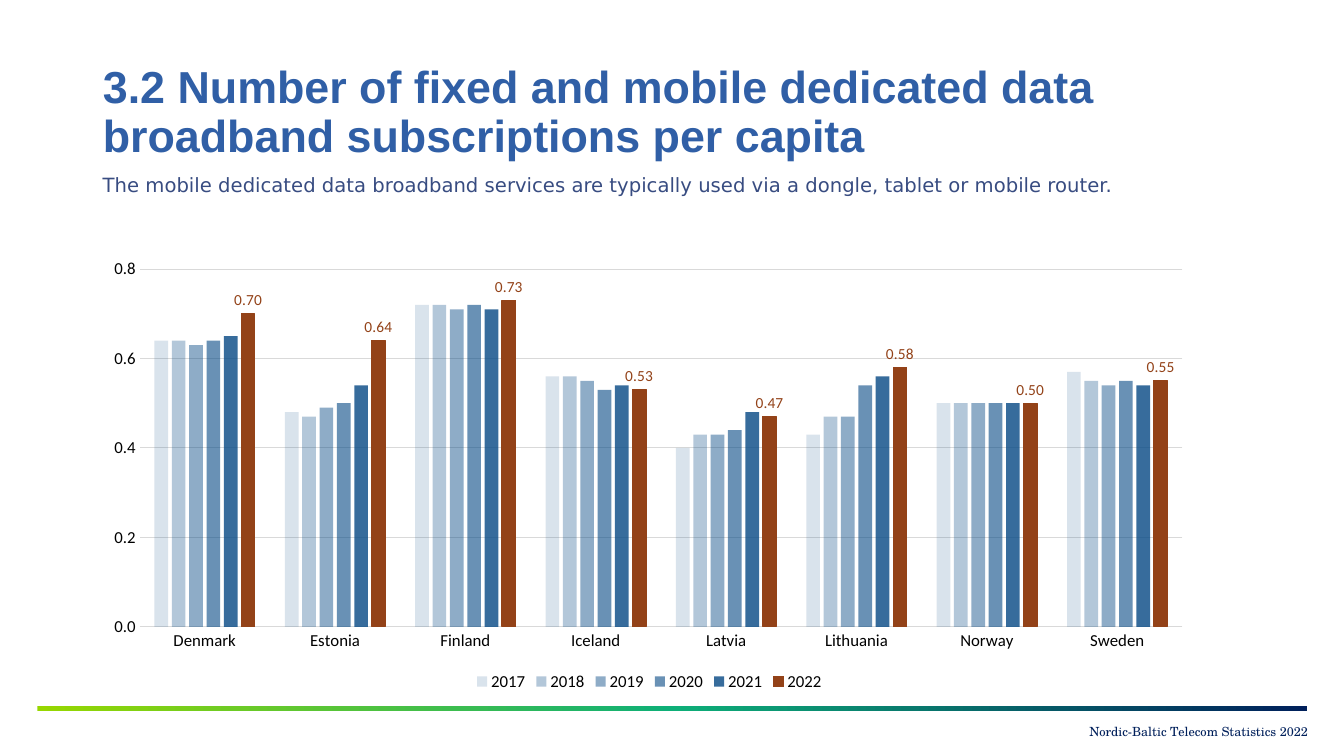
from lxml import etree
from pptx import Presentation
from pptx.chart.data import CategoryChartData
from pptx.dml.color import RGBColor
from pptx.enum.chart import XL_CHART_TYPE as ChartType
from pptx.enum.chart import XL_LABEL_POSITION as LabelPosition
from pptx.enum.chart import XL_LEGEND_POSITION as LegendPosition
from pptx.enum.chart import XL_TICK_MARK as TickMark
from pptx.enum.shapes import MSO_SHAPE as Preset
from pptx.enum.text import MSO_ANCHOR as Anchor
from pptx.enum.text import MSO_AUTO_SIZE as AutoSize
from pptx.enum.text import PP_ALIGN as Align
from pptx.oxml import parse_xml
from pptx.oxml.ns import nsdecls, qn
from pptx.util import Inches, Pt

COLORS = {
    "title": "305FA6", "subtitle": "384C81", "navy": "00205B",
    "lime": "97D700", "green": "0EAF78", "black": "000000",
    "grid": "D9D9D9", "bar": "054884", "latest": "934218",
}
COUNTRIES = ["Denmark", "Estonia", "Finland", "Iceland",
             "Latvia", "Lithuania", "Norway", "Sweden"]
SUBSCRIPTIONS = {
    "2017": [0.64, 0.48, 0.72, 0.56, 0.40, 0.43, 0.50, 0.57],
    "2018": [0.64, 0.47, 0.72, 0.56, 0.43, 0.47, 0.50, 0.55],
    "2019": [0.63, 0.49, 0.71, 0.55, 0.43, 0.47, 0.50, 0.54],
    "2020": [0.64, 0.50, 0.72, 0.53, 0.44, 0.54, 0.50, 0.55],
    "2021": [0.65, 0.54, 0.71, 0.54, 0.48, 0.56, 0.50, 0.54],
    "2022": [0.70, 0.64, 0.73, 0.53, 0.47, 0.58, 0.50, 0.55],
}
OPACITY = {"2017": 15, "2018": 30, "2019": 45, "2020": 60, "2021": 80}
PLOT_AREA = {"x": 0.042, "y": 0.043, "w": 0.937, "h": 0.803}


def color(name):
    """Return the named colour."""
    return RGBColor.from_string(COLORS[name])


def inches(*lengths):
    """Convert several lengths to inches."""
    return [Inches(length) for length in lengths]


def set_font(font, size, name, shade, bold=False):
    """Format a font."""
    font.size, font.name, font.bold = Pt(size), name, bold
    font.color.rgb = color(shade)


def write_text(box, text, size, font, shade, bold=False, align=Align.LEFT,
               anchor=Anchor.TOP, insets=(0.1, 0.05, 0.1, 0.05), spacing=1.0):
    """Fill a box with one formatted paragraph."""
    frame = box.text_frame
    frame.word_wrap, frame.auto_size = True, AutoSize.NONE
    frame.vertical_anchor = anchor
    (frame.margin_left, frame.margin_top,
     frame.margin_right, frame.margin_bottom) = inches(*insets)
    para = frame.paragraphs[0]
    para.alignment, para.line_spacing = align, spacing
    span = para.add_run()
    span.text = text
    set_font(span.font, size, font, shade, bold)


def add_title(page, text):
    """Place the slide title."""
    title = page.shapes.title
    title.left, title.top, title.width, title.height = inches(0.92, 0.4, 11.5, 1.45)
    write_text(title, text, 32, "Arial", "title", bold=True,
               anchor=Anchor.MIDDLE, spacing=0.9)


def add_text(page, place, text, **style):
    """Add a text box."""
    write_text(page.shapes.add_textbox(*inches(*place)), text, **style)


def add_gradient_bar(page, place, shades):
    """Add a thin bar with evenly spaced gradient stops."""
    bar = page.shapes.add_shape(Preset.RECTANGLE, *inches(*place))
    bar.shadow.inherit = False
    bar.line.fill.background()
    bar.fill.gradient()
    bar.fill.gradient_angle = 0
    stops = bar.fill._fill._gradFill.find(qn("a:gsLst"))
    for stop in list(stops):
        stops.remove(stop)
    for index, shade in enumerate(shades):
        position = round(100000 * index / (len(shades) - 1))
        stops.append(parse_xml(
            f'<a:gs {nsdecls("a")} pos="{position}">'
            f'<a:srgbClr val="{COLORS[shade]}"/></a:gs>'))


def format_axes(chart):
    """Format both axes and the gridlines."""
    for axis in (chart.category_axis, chart.value_axis):
        axis.major_tick_mark = axis.minor_tick_mark = TickMark.NONE
        set_font(axis.tick_labels.font, 12, "Calibri", "black")
    values = chart.value_axis
    values.minimum_scale, values.maximum_scale, values.major_unit = 0, 0.8, 0.2
    values.tick_labels.number_format = "#,##0.0"
    values.tick_labels.number_format_is_linked = False
    values.format.line.fill.background()
    for line in (values.major_gridlines.format.line,
                 chart.category_axis.format.line):
        line.color.rgb, line.width = color("grid"), Pt(0.75)


def format_series(series):
    """Tint earlier years and label the latest one."""
    fill = series.format.fill
    fill.solid()
    if series.name in OPACITY:
        fill.fore_color.rgb = color("bar")
        tint = series._element.find(".//" + qn("a:srgbClr"))
        etree.SubElement(tint, qn("a:alpha"), val=str(OPACITY[series.name] * 1000))
        return
    fill.fore_color.rgb = color("latest")
    series.format.line.color.rgb = color("latest")
    series.format.line.width = Pt(0.75)
    labels = series.data_labels
    labels.show_value, labels.position = True, LabelPosition.OUTSIDE_END
    labels.number_format, labels.number_format_is_linked = "0.00", False
    set_font(labels.font, 11, "Calibri", "latest")


def place_plot(chart):
    """Fix the inner plot area as fractions of the chart."""
    area = chart._chartSpace.chart.plotArea
    for layout in area.findall(qn("c:layout")):
        area.remove(layout)
    sizes = "".join(f'<c:{key} val="{value}"/>' for key, value in PLOT_AREA.items())
    area.insert(0, parse_xml(
        f'<c:layout {nsdecls("c")}><c:manualLayout><c:layoutTarget val="inner"/>'
        f'<c:xMode val="edge"/><c:yMode val="edge"/>{sizes}'
        f'</c:manualLayout></c:layout>'))


def add_column_chart(page, place):
    """Add the chart of subscriptions per capita."""
    data = CategoryChartData()
    data.categories = COUNTRIES
    for year, values in SUBSCRIPTIONS.items():
        data.add_series(year, values)
    chart = page.shapes.add_chart(
        ChartType.COLUMN_CLUSTERED, *inches(*place), data).chart
    chart.has_title = False
    set_font(chart.font, 10, "Calibri", "black")
    chart.has_legend = True
    chart.legend.position = LegendPosition.BOTTOM
    chart.legend.include_in_layout = False
    set_font(chart.legend.font, 12, "Calibri", "black")
    plot = chart.plots[0]
    plot.gap_width, plot.overlap, plot.vary_by_categories = 219, -27, False
    format_axes(chart)
    for series in plot.series:
        format_series(series)
    place_plot(chart)


def main():
    """Build the slide."""
    deck = Presentation()
    deck.slide_width, deck.slide_height = inches(13.33, 7.5)
    page = deck.slides.add_slide(deck.slide_layouts.get_by_name("Title Only"))
    add_gradient_bar(page, (0.37, 7, 12.59, 0.05), ["lime", "green", "navy"])
    add_text(page, (9.8, 7.13, 3.17, 0.3), "Nordic-Baltic Telecom Statistics 2022",
             size=9, font="TeX Gyre Schola", shade="navy", align=Align.RIGHT,
             anchor=Anchor.MIDDLE, insets=(0.1, 0, 0, 0.05))
    add_title(page, "3.2 Number of fixed and mobile dedicated data "
                    "broadband subscriptions per capita")
    add_column_chart(page, (0.92, 2.48, 11.04, 4.42))
    add_text(page, (0.92, 1.67, 11.04, 0.56),
             "The mobile dedicated data broadband services are typically used "
             "via a dongle, tablet or mobile router.",
             size=14, font="DejaVu Sans", shade="subtitle")
    deck.save("out.pptx")


if __name__ == "__main__":
    main()
